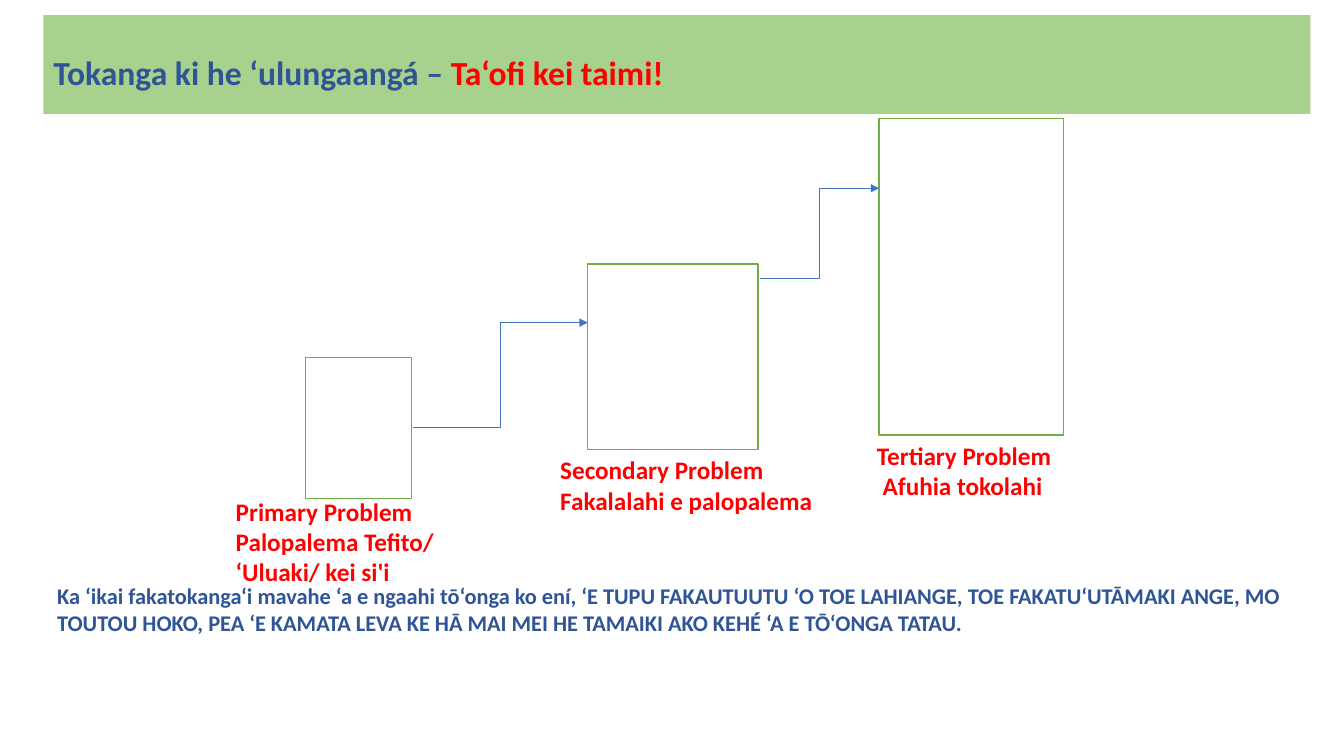
from dataclasses import dataclass

from lxml.etree import SubElement
from pptx import Presentation
from pptx.dml.color import RGBColor
from pptx.enum.shapes import MSO_CONNECTOR, MSO_SHAPE
from pptx.enum.text import MSO_ANCHOR, MSO_AUTO_SIZE, PP_ALIGN
from pptx.oxml.ns import qn
from pptx.util import Pt

WHITE = RGBColor(0xFF, 0xFF, 0xFF)
RED = RGBColor(0xFF, 0x00, 0x00)
NAVY = RGBColor(0x2F, 0x55, 0x97)
ARROW_BLUE = RGBColor(0x44, 0x72, 0xC4)
BANNER_GREEN = RGBColor(0xA9, 0xD1, 0x8E)
BORDER_GREEN = RGBColor(0x70, 0xAD, 0x47)

FONT_FORMAT = {"name": "Calibri", "bold": True}
BANNER_FORMAT = {
    "word_wrap": True,
    "vertical_anchor": MSO_ANCHOR.TOP,
    "margin_top": Pt(29.5),
}
CAPTION_FORMAT = {"word_wrap": True, "auto_size": MSO_AUTO_SIZE.SHAPE_TO_FIT_TEXT}


@dataclass
class Area:
    left: float
    top: float
    width: float
    height: float

    def lengths(self) -> list:
        return [Pt(v) for v in (self.left, self.top, self.width, self.height)]


@dataclass
class Caption:
    area: Area
    text: str
    size: float
    color: RGBColor


@dataclass
class Step:
    start: tuple[float, float]
    end: tuple[float, float]


# Stages of the problem, growing from left to right
STAGES = [
    Area(218.3, 255.3, 75.8, 100.8),
    Area(419.5, 188.5, 122, 132.5),
    Area(628, 84.7, 131.8, 226.2),
]
STEPS = [
    Step((295.1, 305.3), (419.8, 230.5)),
    Step((542.8, 198.8), (628, 134.5)),
]
CAPTIONS = [
    Caption(Area(33.8, 412.6, 902.2, 46), "Ka ‘ikai fakatokanga‘i mavahe ‘a e ngaahi tō‘onga ko ení, "
            "‘E TUPU FAKAUTUUTU ‘O TOE LAHIANGE, TOE FAKATU‘UTĀMAKI ANGE, MO TOUTOU HOKO, "
            "PEA ‘E KAMATA LEVA KE HĀ MAI MEI HE TAMAIKI AKO KEHÉ ‘A E TŌ‘ONGA TATAU.", 16, NAVY),
    Caption(Area(161.3, 350.8, 212.4, 72.7),
            "Primary Problem\nPalopalema Tefito/ ‘Uluaki/ kei si'i", 18, RED),
    Caption(Area(393.1, 321.3, 199.4, 50.9),
            "Secondary Problem\nFakalalahi e palopalema", 18, RED),
    Caption(Area(619.3, 311, 141.1, 50.9),
            "Tertiary Problem\v Afuhia tokolahi", 18, RED),
]
TITLE_PARTS = [("Tokanga ki he ‘ulungaangá – ", NAVY), ("Ta‘ofi kei taimi!", RED)]


def apply_format(target, values: dict) -> None:
    for attribute, value in values.items():
        setattr(target, attribute, value)


def style_font(font, size: float, color: RGBColor) -> None:
    apply_format(font, FONT_FORMAT | {"size": Pt(size)})
    font.color.rgb = color


def add_rectangle(slide, area: Area, fill: RGBColor):
    rectangle = slide.shapes.add_shape(MSO_SHAPE.RECTANGLE, *area.lengths())
    rectangle.shadow.inherit = False
    rectangle.fill.solid()
    rectangle.fill.fore_color.rgb = fill
    return rectangle


def add_banner(slide) -> None:
    banner = add_rectangle(slide, Area(31, 10.8, 905, 70.6), BANNER_GREEN)
    banner.line.fill.background()
    apply_format(banner.text_frame, BANNER_FORMAT)
    title = banner.text_frame.paragraphs[0]
    apply_format(title, {"alignment": PP_ALIGN.LEFT, "line_spacing": 0.9})
    for text, color in TITLE_PARTS:
        part = title.add_run()
        part.text = text
        style_font(part.font, 24, color)


def add_stage(slide, area: Area) -> None:
    stage = add_rectangle(slide, area, WHITE)
    stage.line.color.rgb = BORDER_GREEN
    stage.line.width = Pt(1)


def add_step(slide, step: Step) -> None:
    points = [Pt(v) for v in (*step.start, *step.end)]
    arrow = slide.shapes.add_connector(MSO_CONNECTOR.ELBOW, *points)
    arrow.line.color.rgb = ARROW_BLUE
    arrow.line.width = Pt(0.5)
    properties = arrow._element.spPr
    SubElement(properties.find(qn("a:ln")), qn("a:tailEnd"), type="triangle")
    SubElement(properties, qn("a:effectLst"))


def add_caption(slide, caption: Caption) -> None:
    frame = slide.shapes.add_textbox(*caption.area.lengths()).text_frame
    apply_format(frame, CAPTION_FORMAT)
    frame.text = caption.text
    for paragraph in frame.paragraphs:
        for run in paragraph.runs:
            style_font(run.font, caption.size, caption.color)


def main() -> None:
    deck = Presentation()
    apply_format(deck, {"slide_width": Pt(960), "slide_height": Pt(540)})
    slide = deck.slides.add_slide(deck.slide_layouts[6])

    # Title banner
    add_banner(slide)

    # Staircase of stages and the arrows between them
    for area in STAGES:
        add_stage(slide, area)
    for step in STEPS:
        add_step(slide, step)

    # Conclusion and stage captions
    for caption in CAPTIONS:
        add_caption(slide, caption)

    deck.save("out.pptx")


if __name__ == "__main__":
    main()
